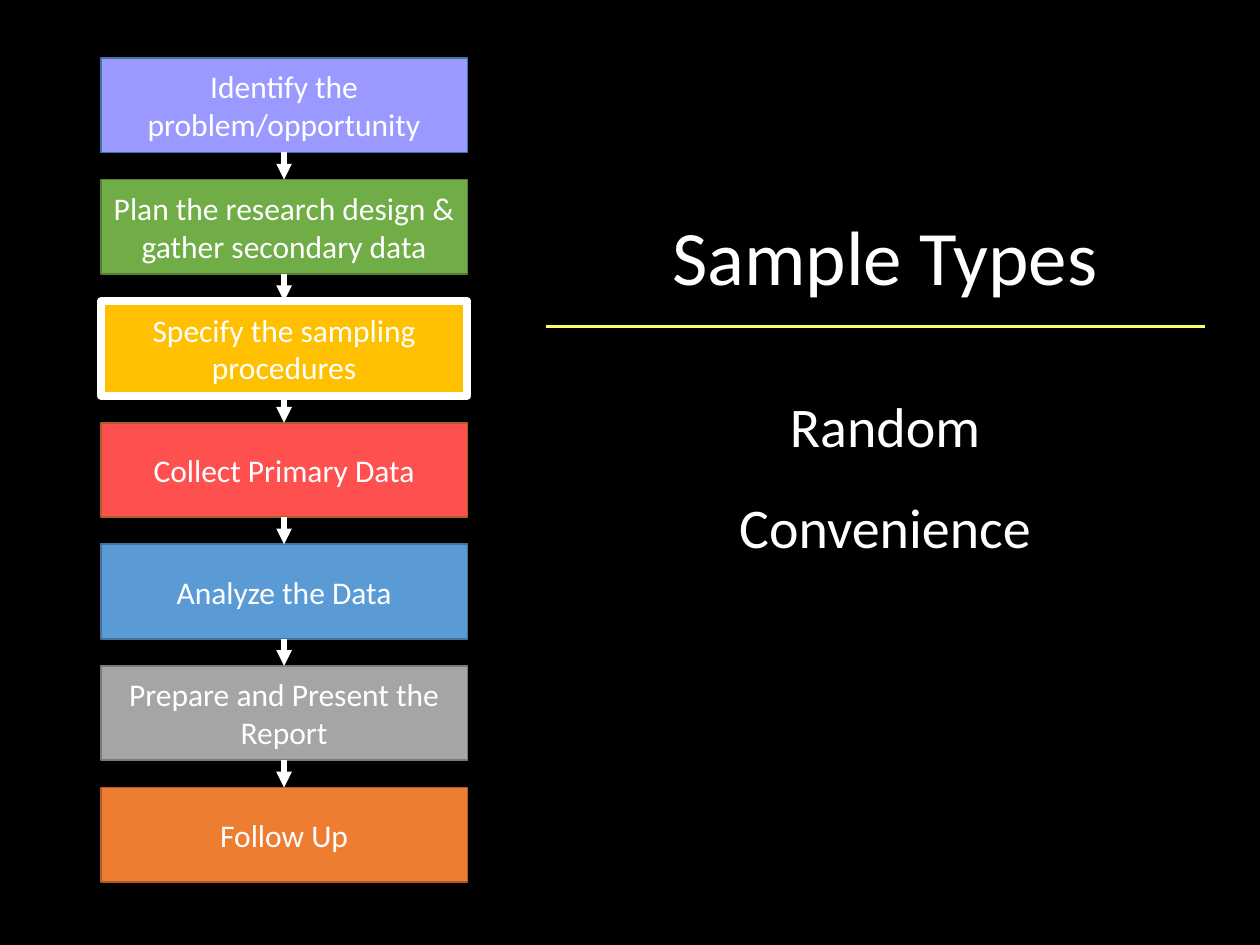
from dataclasses import dataclass

from lxml import etree
from pptx import Presentation
from pptx import util as u
from pptx.dml.color import RGBColor
from pptx.enum import shapes, text
from pptx.oxml import ns


@dataclass(frozen=True)
class Theme:
    font: str = "Calibri"
    background: str = "000000"
    text: str = "FFFFFF"
    arrow: str = "FFFFFF"
    rule: str = "FFFF65"
    title_size: int = 44
    body_size: int = 32
    step_size: int = 18


theme = Theme()


def format_text(frame, size, anchor, spacing=1.0):
    frame.word_wrap = True
    frame.auto_size = text.MSO_AUTO_SIZE.NONE
    frame.vertical_anchor = anchor
    for paragraph in frame.paragraphs:
        paragraph.alignment = text.PP_ALIGN.CENTER
        paragraph.line_spacing = spacing
        for run in paragraph.runs:
            run.font.name = theme.font
            run.font.size = u.Pt(size)
            run.font.color.rgb = RGBColor.from_string(theme.text)


def add_line(slide, start, end, color, width):
    line = slide.shapes.add_connector(
        shapes.MSO_CONNECTOR.STRAIGHT, *(u.Inches(value) for value in start + end)
    )
    line.line.color.rgb = RGBColor.from_string(color)
    line.line.width = u.Pt(width)
    etree.SubElement(line._element.spPr, ns.qn("a:effectLst"))
    return line


presentation = Presentation()
presentation.slide_width = u.Inches(10)
presentation.slide_height = u.Inches(7.5)
slide = presentation.slides.add_slide(presentation.slide_layouts[5])
slide.background.fill.solid()
slide.background.fill.fore_color.rgb = RGBColor.from_string(theme.background)

# Research steps: label, fill, outline colour, outline width
steps = [
    ("Identify the problem/opportunity", "9999FF", "43739E", 1),
    ("Plan the research design & gather secondary data", "70AD47", "538035", 1),
    ("Specify the sampling procedures", "FFC000", "FFFFFF", 4.5),
    ("Collect Primary Data", "FF5050", "AF5C24", 1),
    ("Analyze the Data", "5B9BD5", "43739E", 1),
    ("Prepare and Present the Report", "A5A5A5", "7A7A7A", 1),
    ("Follow Up", "ED7D31", "AF5C24", 1),
]
left, width, height = 0.8, 2.91, 0.75
first_top, last_top = 0.46, 6.25
pitch = (last_top - first_top) / (len(steps) - 1)

boxes = []
for index, (label, fill, outline, outline_width) in enumerate(steps):
    box = slide.shapes.add_shape(
        shapes.MSO_SHAPE.RECTANGLE,
        u.Inches(left), u.Inches(first_top + index * pitch),
        u.Inches(width), u.Inches(height),
    )
    box.shadow.inherit = False
    box.fill.solid()
    box.fill.fore_color.rgb = RGBColor.from_string(fill)
    box.line.color.rgb = RGBColor.from_string(outline)
    box.line.width = u.Pt(outline_width)
    box.text_frame.text = label
    format_text(box.text_frame, theme.step_size, text.MSO_ANCHOR.MIDDLE)
    boxes.append(box)

# Title
title = slide.shapes.title
title.left, title.top = u.Inches(3.73), u.Inches(2.34)
title.width, title.height = u.Inches(6.59), u.Inches(0.11)
title.text_frame.text = "Sample Types"
format_text(title.text_frame, theme.title_size, text.MSO_ANCHOR.BOTTOM, 0.9)

# Sample types
body = slide.shapes.add_textbox(
    u.Inches(4.4), u.Inches(2.79), u.Inches(5.25), u.Inches(2.79)
)
body.text_frame.text = "Random\nConvenience"
format_text(body.text_frame, theme.body_size, text.MSO_ANCHOR.TOP, 1.5)

# Rule under the title
add_line(slide, (4.33, 2.59), (9.56, 2.59), theme.rule, 1.5)

# Arrows between consecutive steps
center = left + width / 2
for index, (upper, lower) in enumerate(zip(boxes, boxes[1:])):
    top = first_top + index * pitch
    arrow = add_line(
        slide, (center, top + height), (center, top + pitch), theme.arrow, 3
    )
    arrow.begin_connect(upper, 2)
    arrow.end_connect(lower, 0)
    etree.SubElement(
        arrow.line._get_or_add_ln(), ns.qn("a:tailEnd"), type="triangle"
    )

presentation.save("out.pptx")
